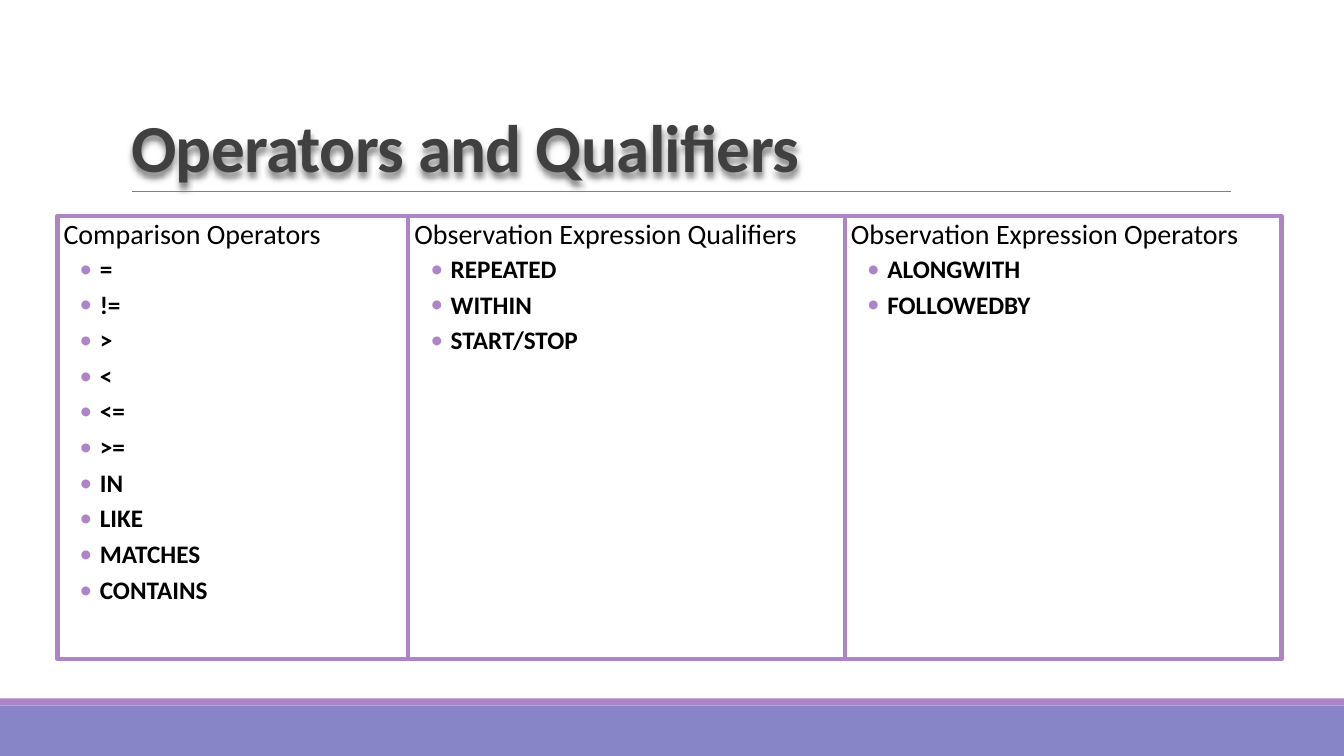
from dataclasses import dataclass

from lxml import etree
from pptx import Presentation
from pptx.dml.color import RGBColor
from pptx.enum.shapes import MSO_CONNECTOR, MSO_SHAPE
from pptx.enum.text import MSO_ANCHOR, MSO_AUTO_SIZE, PP_ALIGN
from pptx.oxml.ns import qn
from pptx.util import Inches, Pt

RECTANGLE = MSO_SHAPE.RECTANGLE
STRAIGHT = MSO_CONNECTOR.STRAIGHT
TOP, BOTTOM = MSO_ANCHOR.TOP, MSO_ANCHOR.BOTTOM
NO_AUTOFIT = MSO_AUTO_SIZE.NONE
LEFT = PP_ALIGN.LEFT

FONT = "Calibri"
PURPLE, VIOLET = "AD84C6", "8784C7"
BLACK, DARK, GREY = "000000", "404040", "808080"
COMPARISON_LAYOUT = 4
PAGE_WIDTH, PAGE_HEIGHT = 13.33, 7.5
COLUMNS_LEFT, COLUMNS_TOP, COLUMNS_HEIGHT = 0.57, 2.14, 4.4


@dataclass
class Band:
    top: float
    height: float
    color: str


@dataclass
class Column:
    width: float
    heading: str
    items: list[str]


BANDS = [Band(7, 0.5, VIOLET), Band(6.93, 0.07, PURPLE)]
COLUMNS = [
    Column(3.48, "Comparison Operators",
           ["=", "!=", ">", "<", "<=", ">=", "IN", "LIKE", "MATCHES", "CONTAINS"]),
    Column(4.33, "Observation Expression Qualifiers",
           ["REPEATED", "WITHIN", "START/STOP"]),
    Column(4.33, "Observation Expression Operators",
           ["ALONGWITH", "FOLLOWEDBY"]),
]


def rgb(color: str) -> RGBColor:
    return RGBColor.from_string(color)


def place(box, left: float, top: float, width: float, height: float) -> None:
    box.left, box.top = Inches(left), Inches(top)
    box.width, box.height = Inches(width), Inches(height)


def set_font(para, size: float, color: str, bold: bool) -> None:
    font = para.font
    font.name, font.size, font.bold = FONT, Pt(size), bold
    font.color.rgb = rgb(color)


def set_layout(para, before: float, after: float, margin: float, indent: float) -> None:
    para.alignment = LEFT
    para.line_spacing = 0.9
    para.space_before, para.space_after = Pt(before), Pt(after)
    properties = para._p.get_or_add_pPr()
    properties.set("marL", str(Inches(margin)))
    properties.set("indent", str(Inches(indent)))


def add_bullet(para) -> None:
    properties = para._p.get_or_add_pPr()
    bullet_color = etree.SubElement(properties, qn("a:buClr"))
    etree.SubElement(bullet_color, qn("a:srgbClr"), val=PURPLE)
    etree.SubElement(properties, qn("a:buFont"), typeface=FONT)
    etree.SubElement(properties, qn("a:buChar"), char="•")


def add_shadow(box) -> None:
    effects = etree.SubElement(box._element.spPr, qn("a:effectLst"))
    shadow = etree.SubElement(effects, qn("a:outerShdw"), blurRad=str(Pt(4)),
                              dist=str(Pt(3)), dir="5400000", algn="t", rotWithShape="0")
    shadow_color = etree.SubElement(shadow, qn("a:srgbClr"), val=BLACK)
    etree.SubElement(shadow_color, qn("a:alpha"), val="50000")


def add_band(page, band: Band) -> None:
    box = page.shapes.add_shape(RECTANGLE, 0, Inches(band.top),
                                Inches(PAGE_WIDTH), Inches(band.height))
    box.shadow.inherit = False
    box.fill.solid()
    box.fill.fore_color.rgb = rgb(band.color)
    box.line.fill.background()


def add_rule(page) -> None:
    rule = page.shapes.add_connector(STRAIGHT, Inches(1.31), Inches(1.9),
                                     Inches(12.21), Inches(1.9))
    rule.line.color.rgb = rgb(GREY)
    rule.line.width = Pt(0.5)
    etree.SubElement(rule._element.spPr, qn("a:effectLst"))


def fill_title(title) -> None:
    place(title, 1.2, 0.31, 11, 1.59)
    add_shadow(title)
    frame = title.text_frame
    frame.text = "Operators and Qualifiers"
    frame.vertical_anchor, frame.auto_size = BOTTOM, NO_AUTOFIT
    para = frame.paragraphs[0]
    para.alignment, para.line_spacing = LEFT, 0.85
    set_font(para, 48, DARK, True)
    para._p.pPr.get_or_add_defRPr().set("spc", "-50")


def fill_column(box, column: Column, left: float) -> None:
    place(box, left, COLUMNS_TOP, column.width, COLUMNS_HEIGHT)
    box.line.color.rgb = rgb(PURPLE)
    box.line.width = Pt(3)

    frame = box.text_frame
    frame.vertical_anchor, frame.auto_size = TOP, NO_AUTOFIT
    frame.margin_left = frame.margin_right = 0
    frame.margin_top = frame.margin_bottom = Inches(0.05)

    heading = frame.paragraphs[0]
    heading.text = column.heading
    set_layout(heading, 12, 2, 0.06, 0)
    etree.SubElement(heading._p.pPr, qn("a:buNone"))
    set_font(heading, 20, BLACK, False)

    for item in column.items:
        para = frame.add_paragraph()
        para.text, para.level = item, 1
        set_layout(para, 2, 4, 0.42, -0.2)
        add_bullet(para)
        set_font(para, 18, BLACK, True)


def main() -> None:
    deck = Presentation()
    deck.slide_width, deck.slide_height = Inches(PAGE_WIDTH), Inches(PAGE_HEIGHT)
    page = deck.slides.add_slide(deck.slide_layouts[COMPARISON_LAYOUT])
    title, *bodies = list(page.placeholders)

    # Footer bands and title rule
    for band in BANDS:
        add_band(page, band)
    add_rule(page)

    # Title and columns
    fill_title(title)
    left = COLUMNS_LEFT
    for box, column in zip(bodies, COLUMNS):
        fill_column(box, column, left)
        left += column.width

    # Unused placeholders
    for box in bodies[len(COLUMNS):]:
        box._element.getparent().remove(box._element)

    deck.save("out.pptx")


if __name__ == "__main__":
    main()
